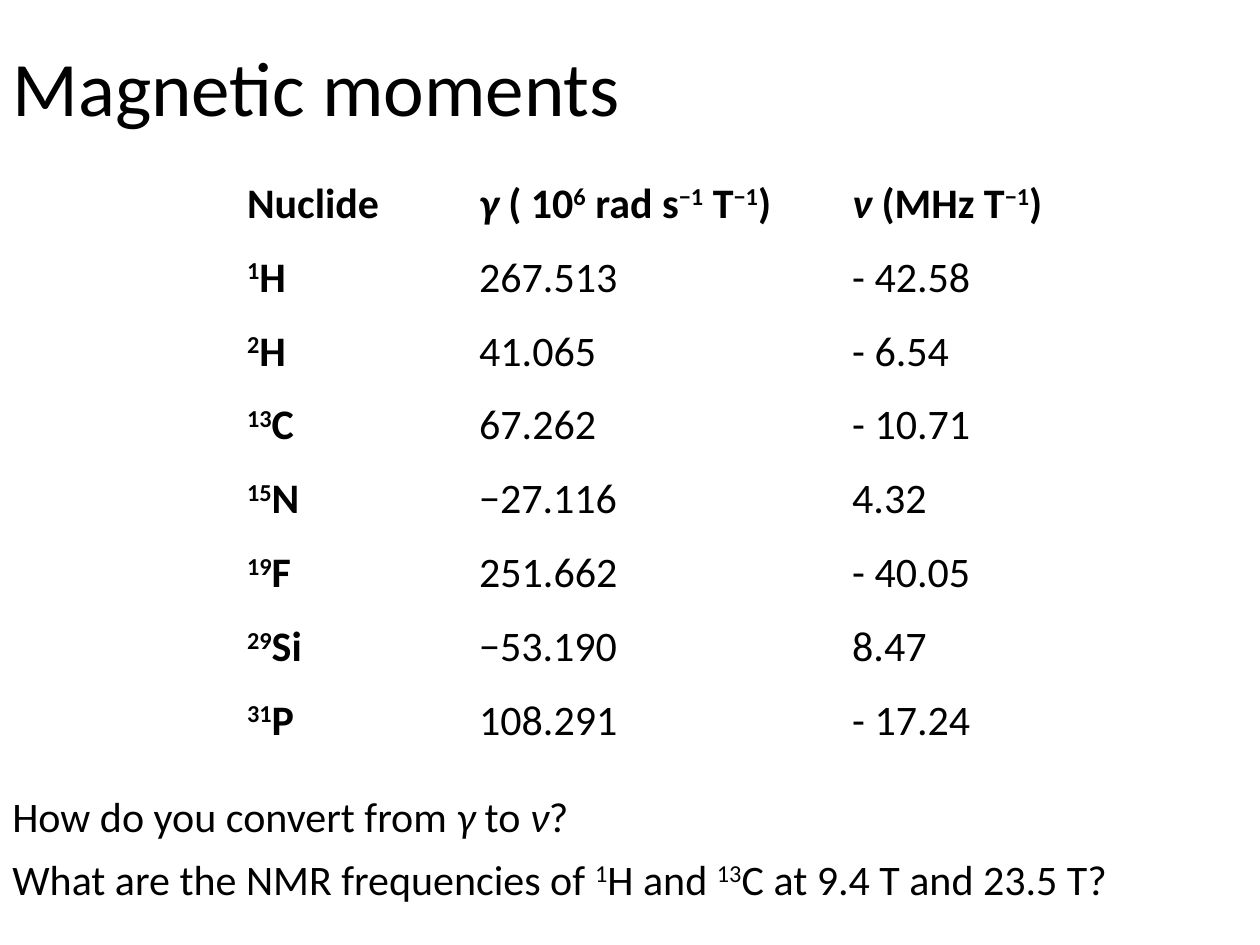
from lxml.etree import SubElement
from pptx import Presentation
from pptx.dml.color import RGBColor
from pptx.enum.text import MSO_ANCHOR as Anchor
from pptx.oxml.ns import qn
from pptx.util import Cm, Pt

HEADER = ["Nuclide", "*γ* ( 10^6^ rad s^−1^ T^−1^)", "*ν* (MHz T^−1^)"]
NUCLIDES = [
    ("^1^H", "267.513", "- 42.58"),
    ("^2^H", "41.065", "- 6.54"),
    ("^13^C", "67.262", "- 10.71"),
    ("^15^N", "−27.116", "4.32"),
    ("^19^F", "251.662", "- 40.05"),
    ("^29^Si", "−53.190", "8.47"),
    ("^31^P", "108.291", "- 17.24"),
]
QUESTIONS = [
    "How do you convert from *γ* to *ν*?",
    "What are the NMR frequencies of ^1^H and ^13^C at 9.4 T and 23.5 T?",
]


def colour(hex_string):
    return RGBColor.from_string(hex_string)


def split_marks(text):
    """Yield (piece, mark); *italic* and ^superscript^ pieces carry their mark."""
    for i, outer in enumerate(text.split("*")):
        for j, piece in enumerate(outer.split("^")):
            if piece:
                yield piece, "*" if i % 2 else "^" if j % 2 else ""


class SlideBuilder:
    font = "Calibri"
    text_colour = "000000"
    border_colour = "FFFFFF"
    body_size = 24

    def __init__(self, slide):
        self.slide = slide

    def add_runs(self, paragraph, text, size, bold=False):
        for piece, mark in split_marks(text):
            run = paragraph.add_run()
            run.text = piece
            run.font.name = self.font
            run.font.size = Pt(size)
            run.font.bold = bold
            run.font.italic = mark == "*"
            run.font.color.rgb = colour(self.text_colour)
            if mark == "^":
                run.font._element.set("baseline", "30000")

    def text_box(self, box, lines, size, anchor=Anchor.TOP, space_before=0):
        shape = self.slide.shapes.add_textbox(*map(Cm, box))
        frame = shape.text_frame
        frame.word_wrap = True
        frame.vertical_anchor = anchor
        for index, line in enumerate(lines):
            paragraph = frame.add_paragraph() if index else frame.paragraphs[0]
            paragraph.line_spacing = 0.9
            paragraph.space_before = Pt(space_before)
            self.add_runs(paragraph, line, size)

    def borders(self, cell, bottom):
        properties = cell._tc.get_or_add_tcPr()
        for side, width in (("L", 1), ("R", 1), ("T", 1), ("B", bottom)):
            line = SubElement(properties, qn(f"a:ln{side}"), w=str(Pt(width)))
            fill = SubElement(line, qn("a:solidFill"))
            SubElement(fill, qn("a:srgbClr"), val=self.border_colour)

    def table(self, left, top, widths, row_height, rows):
        frame = self.slide.shapes.add_table(
            len(rows), len(widths), Cm(left), Cm(top),
            Cm(sum(widths)), Cm(row_height * len(rows)))
        table = frame.table
        table.horz_banding = False
        for column, width in zip(table.columns, widths):
            column.width = Cm(width)
        for r, row in enumerate(rows):
            table.rows[r].height = Cm(row_height)
            for c, text in enumerate(row):
                cell = table.cell(r, c)
                self.borders(cell, bottom=1 if r else 3)
                cell.fill.background()
                cell.vertical_anchor = Anchor.MIDDLE
                cell.margin_left = cell.margin_right = Cm(0.18)
                cell.margin_top = cell.margin_bottom = Cm(0.08)
                paragraph = cell.text_frame.paragraphs[0]
                paragraph.line_spacing = 1.07
                self.add_runs(paragraph, text, self.body_size, bold=r == 0 or c == 0)


def main():
    presentation = Presentation()
    presentation.slide_width = Cm(25.4)
    presentation.slide_height = Cm(19.05)
    builder = SlideBuilder(presentation.slides.add_slide(presentation.slide_layouts[6]))

    # Nuclide table
    builder.table(4.8, 3.33, [4.68, 7.52, 6.1], 1.49, [HEADER, *NUCLIDES])

    # Title
    builder.text_box((0, 0, 21.9, 3.68), ["Magnetic moments"], 44, Anchor.MIDDLE)

    # Questions
    builder.text_box((0, 15.93, 25.4, 3.12), QUESTIONS, builder.body_size, space_before=10)

    presentation.save("out.pptx")


if __name__ == "__main__":
    main()
